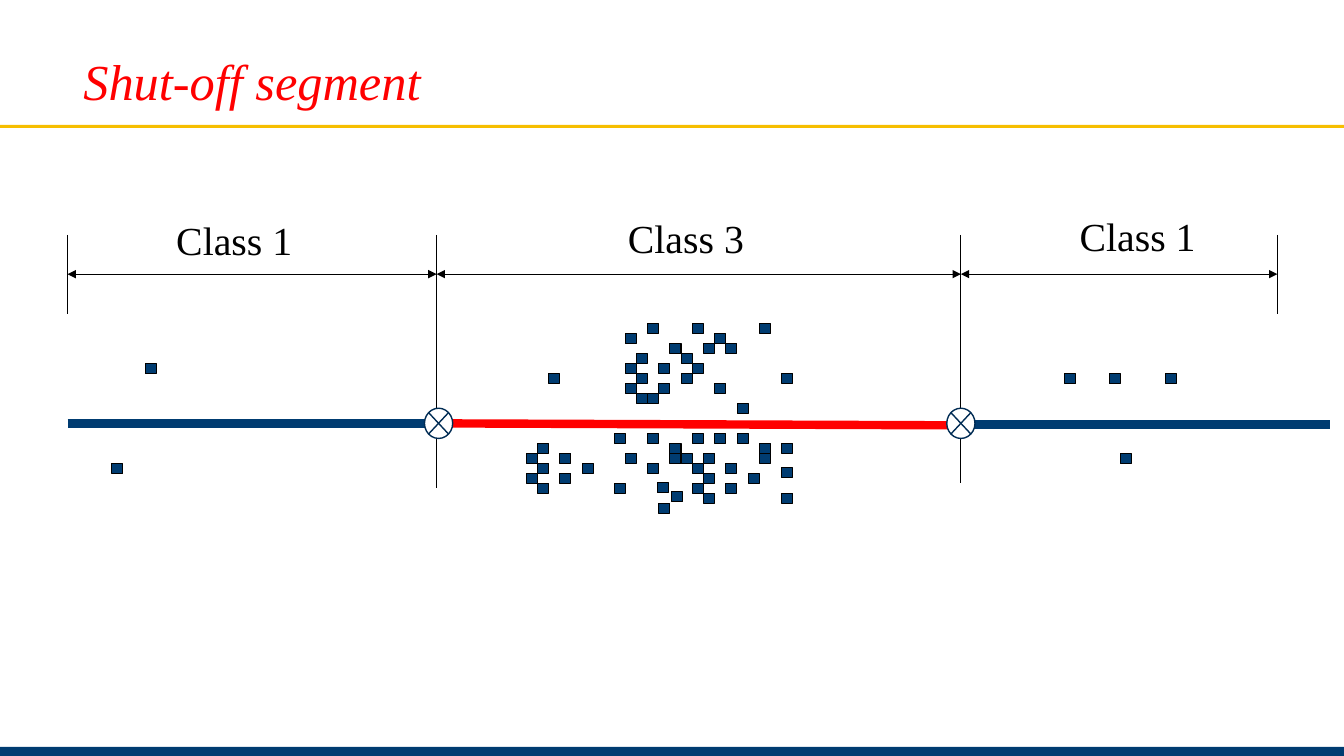
import pptx
import pptx.util
import pptx.dml.color
import pptx.enum.shapes
import pptx.enum.text
import pptx.oxml
import pptx.oxml.ns

Inches = pptx.util.Inches
Pt = pptx.util.Pt
SHAPE = pptx.enum.shapes.MSO_SHAPE
ALIGN = pptx.enum.text.PP_ALIGN

FONT = "Times New Roman"
NAVY = "003C71"
BLACK = "000000"
RED = "FF0000"
START, VALVE_A, VALVE_B, END = 0.67, 4.33, 9.53, 12.67
DIM_Y, PIPE_Y = 2.72, 4.2
COL_STEP, ROW_STEP, ROW_TOP = 0.111, 0.099, 3.21

WEST_ROWS = {5: [2], 12: [1], 13: [0, 3], 14: [1, 5], 15: [0, 3], 16: [1]}
TOWN_ROWS = {
    0: [3, 7, 13], 1: [1, 9], 2: [5, 8, 10], 3: [2, 6], 4: [1, 4, 7],
    5: [2, 6, 15], 6: [1, 4, 9], 7: [2, 3], 8: [11],
    11: [0, 3, 7, 9, 11], 12: [5, 13, 15], 13: [1, 5, 6, 8, 13],
    14: [3, 7, 10], 15: [8, 12], 16: [0, 7, 10], 17: [8, 15], 18: [4],
}
LONE = [
    (1.44, 3.61), (1.11, 4.6), (7.75, 4.64), (6.66, 4.88), (6.52, 4.79),
    (10.56, 3.71), (11, 3.71), (11.56, 3.71), (11.11, 4.5),
]


def paint(color, code):
    """Make a fill or line format solid with a hex colour."""
    color.solid()
    color.fore_color.rgb = pptx.dml.color.RGBColor.from_string(code)


def add_shape(slide, kind, box, fill, line=None, width=0.75):
    """Add a flat preset shape, with an outline if a colour is given."""
    shape = slide.shapes.add_shape(kind, *map(Inches, box))
    shape.shadow.inherit = False
    paint(shape.fill, fill)
    if line:
        paint(shape.line.fill, line)
        shape.line.width = Pt(width)
    else:
        shape.line.fill.background()


def add_line(slide, start, end, color=BLACK, width=0.75, arrows=False):
    """Add a straight line, with arrowheads at both ends if asked."""
    line = slide.shapes.add_connector(
        pptx.enum.shapes.MSO_CONNECTOR.STRAIGHT, *map(Inches, start + end))
    paint(line.line.fill, color)
    line.line.width = Pt(width)
    if arrows:
        outline = line.line._get_or_add_ln()
        for tag in ("a:headEnd", "a:tailEnd"):
            pptx.oxml.ns.qn(tag)
            tip = outline.makeelement(pptx.oxml.ns.qn(tag), {"type": "triangle"})
            outline.append(tip)
    props = line._element.spPr
    props.append(props.makeelement(pptx.oxml.ns.qn("a:effectLst"), {}))


def set_text(shape, text, size, color, align, slant=False):
    """Write one line of text that does not wrap."""
    frame = shape.text_frame
    frame.text = text
    frame.word_wrap = False
    frame.paragraphs[0].alignment = align
    font = frame.paragraphs[0].runs[0].font
    font.name, font.size, font.italic = FONT, Pt(size), slant
    paint(font.fill, color)


def add_title(slide, text):
    """Place and format the slide title."""
    title = slide.shapes.title
    title.left, title.top, title.width, title.height = map(
        Inches, (0.71, 0.44, 3.58, 0.71))
    set_text(title, text, 36, RED, ALIGN.CENTER, True)
    title.text_frame.vertical_anchor = pptx.enum.text.MSO_ANCHOR.MIDDLE


def add_label(slide, text, left, top):
    """Add a class label above its span."""
    box = slide.shapes.add_textbox(*map(Inches, (left, top, 1.37, 0.58)))
    set_text(box, text, 28.4, BLACK, ALIGN.LEFT)


def add_house(slide, left, top):
    """Add one house marker."""
    add_shape(slide, SHAPE.RECTANGLE, (left, top, 0.11, 0.1), NAVY, BLACK)


def add_rows(slide, left, rows):
    """Add houses on a grid, given the filled columns of each row."""
    for row, cols in rows.items():
        for col in cols:
            add_house(slide, left + col * COL_STEP, ROW_TOP + row * ROW_STEP)


def main():
    """Build and save the slide."""
    deck = pptx.Presentation()
    deck.slide_width, deck.slide_height = Inches(13.33), Inches(7.5)
    slide = deck.slides.add_slide(deck.slide_layouts[5])
    add_shape(slide, SHAPE.RECTANGLE, (0, 1.24, 13.33, 0.03), "F6BE00")
    add_shape(slide, SHAPE.RECTANGLE, (0, 7.41, 13.33, 0.1), NAVY)
    add_title(slide, "Shut-off segment")

    for x, foot in ((START, 3.12), (VALVE_A, 4.84), (VALVE_B, 4.79), (END, 3.12)):
        add_line(slide, (x, 2.33), (x, foot))
    for left, right in ((START, VALVE_A), (VALVE_A, VALVE_B), (VALVE_B, END)):
        add_line(slide, (left, DIM_Y), (right, DIM_Y), arrows=True)
    for label in (("Class 1", 1.65, 2.09), ("Class 3", 6.13, 2.07),
                  ("Class 1", 10.61, 2.05)):
        add_label(slide, *label)

    add_rows(slide, 5.22, WEST_ROWS)
    add_rows(slide, 6.09, TOWN_ROWS)
    for spot in LONE:
        add_house(slide, *spot)

    add_line(slide, (START, PIPE_Y), (VALVE_A, PIPE_Y), NAVY, 6)
    add_line(slide, (VALVE_B, 4.21), (13.19, 4.21), NAVY, 6)
    add_line(slide, (VALVE_A, PIPE_Y), (VALVE_B, 4.22), RED, 6)
    for left in (4.21, 9.39):
        add_shape(slide, SHAPE.FLOWCHART_SUMMING_JUNCTION,
                  (left, 4.05, 0.28, 0.3), "FFFFFF", "002C54", 1)
    deck.save("out.pptx")


if __name__ == "__main__":
    main()
